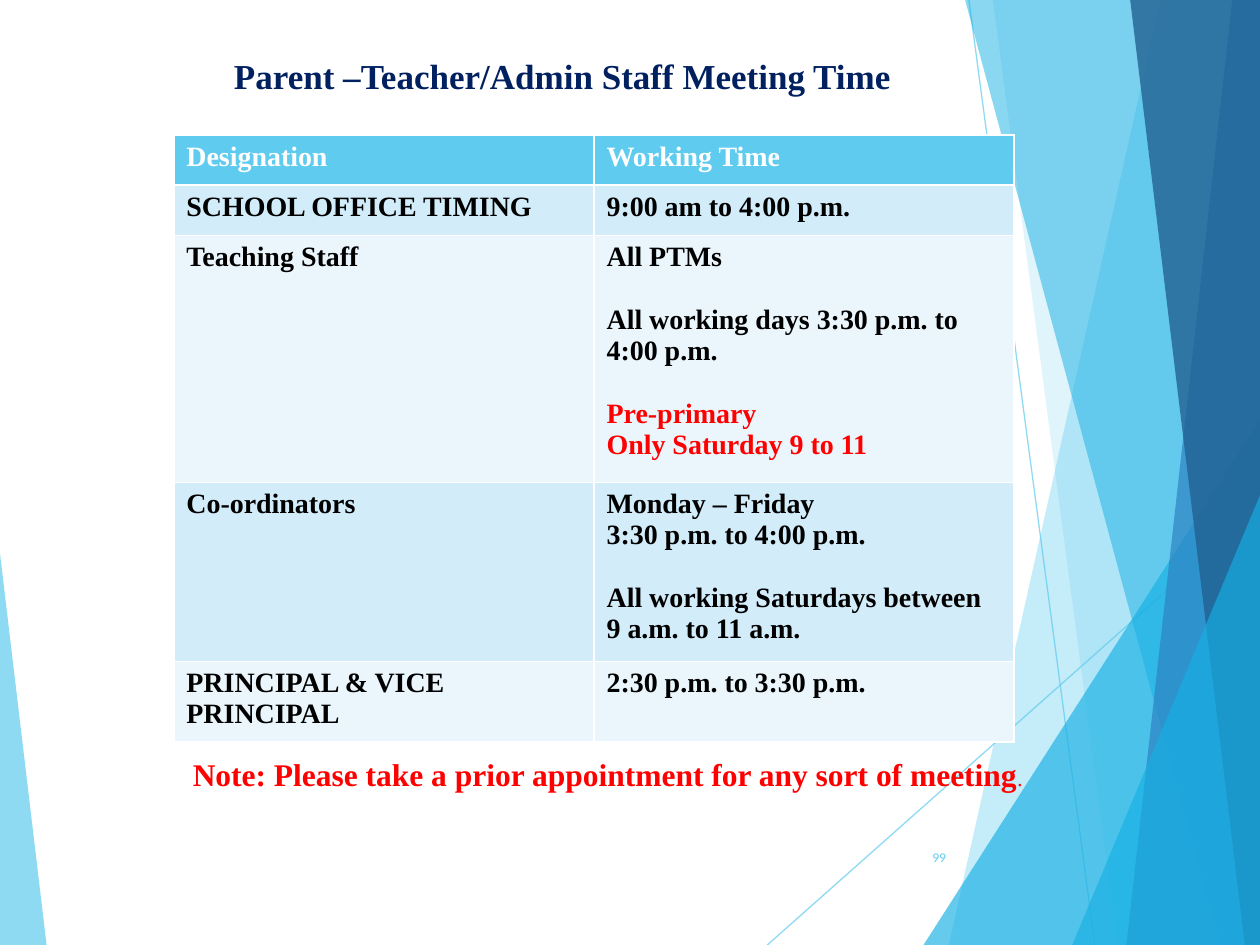
from lxml import etree
from pptx import Presentation
from pptx.dml.color import RGBColor
from pptx.enum import shapes, text
from pptx.oxml import ns
from pptx.util import Inches, Pt

SKY, CYAN, BLUE, NAVY = "5FCBEF", "17B0E4", "2E83C3", "226292"
RED, BLACK, WHITE = "FF0000", "000000", "FFFFFF"
SERIF = "Times New Roman"

RAYS = [((7.69, 0), (8.69, 7.5)), ((10, 4.03), (6.09, 7.5))]
BANDS = [
    (9.21, 7.53, SKY, 36),
    (7.88, 8.87, SKY, 20),
    (7.66, 9.68, CYAN, 50),
    (9.78, 8.94, BLUE, 70),
    (8.97, 9.88, NAVY, 80),
]
TRIANGLES = [
    (7.33, 3.33, 2.67, 1, CYAN, 66),
    (8.51, 3.93, 1.49, 1, CYAN, 66),
    (0, 4.39, 0.37, 0, SKY, 70),
]
HEADINGS = ["Designation", "Working Time"]
TIMINGS = [
    ("SCHOOL OFFICE TIMING", ["9:00 am to 4:00 p.m."]),
    ("Teaching Staff", [
        "All PTMs",
        "All working days 3:30 p.m. to 4:00 p.m.",
        "Pre-primary\nOnly Saturday 9 to 11",
    ]),
    ("Co-ordinators", [
        "Monday – Friday\n3:30 p.m. to 4:00 p.m.",
        "All working Saturdays between 9 a.m. to 11 a.m.",
    ]),
    ("PRINCIPAL & VICE PRINCIPAL", ["2:30 p.m. to 3:30 p.m."]),
]
ROW_HEIGHTS = [0.4, 0.4, 1.96, 1.42, 0.64]


def rgb(color):
    return RGBColor.from_string(color)


def style(run, size, color, font=SERIF, bold=True):
    run.font.size = Pt(size)
    run.font.name = font
    run.font.bold = bold
    run.font.color.rgb = rgb(color)


def place(shape, left, top, width, height):
    shape.left, shape.top = Inches(left), Inches(top)
    shape.width, shape.height = Inches(width), Inches(height)


def set_opacity(shape, percent):
    for color in shape._element.spPr.iter(ns.qn("a:srgbClr")):
        etree.SubElement(color, ns.qn("a:alpha"), val=str(percent * 1000))


def paint(shape, color, percent):
    shape.shadow.inherit = False
    shape.fill.solid()
    shape.fill.fore_color.rgb = rgb(color)
    shape.line.fill.background()
    set_opacity(shape, percent)


def add_ray(slide, start, end):
    ray = slide.shapes.add_connector(
        shapes.MSO_CONNECTOR.STRAIGHT, *map(Inches, start + end))
    ray.line.width = Pt(0.75)
    ray.line.color.rgb = rgb(SKY)
    set_opacity(ray, 70)
    etree.SubElement(ray._element.spPr, ns.qn("a:effectLst"))


def add_band(slide, top_x, bottom_x, color, percent):
    outline = slide.shapes.build_freeform(Inches(top_x), 0)
    corners = [(10, 0), (10, 7.5), (bottom_x, 7.5)]
    outline.add_line_segments([(Inches(x), Inches(y)) for x, y in corners])
    paint(outline.convert_to_shape(), color, percent)


def add_triangle(slide, left, top, width, apex, color, percent):
    triangle = slide.shapes.add_shape(
        shapes.MSO_SHAPE.ISOSCELES_TRIANGLE,
        Inches(left), Inches(top), Inches(width), Inches(7.5 - top))
    triangle.adjustments[0] = apex
    paint(triangle, color, percent)


def add_backdrop(slide):
    for ray in RAYS:
        add_ray(slide, *ray)
    for band in BANDS[:2]:
        add_band(slide, *band)
    add_triangle(slide, *TRIANGLES[0])
    for band in BANDS[2:]:
        add_band(slide, *band)
    for triangle in TRIANGLES[1:]:
        add_triangle(slide, *triangle)


def fill_note(note):
    place(note, 1.46, 4.53, 7.65, 2.02)
    frame = note.text_frame
    frame.auto_size = text.MSO_AUTO_SIZE.NONE
    frame.vertical_anchor = text.MSO_ANCHOR.BOTTOM
    frame.margin_left = frame.margin_right = Inches(0.07)
    frame.margin_bottom = Inches(0.26)
    paragraph = frame.paragraphs[0]
    paragraph.text = "Note: Please take a prior appointment for any sort of meeting"
    style(paragraph.runs[0], 18, RED)
    stop = paragraph.add_run()
    stop.text = "."
    style(stop, 12, RED, bold=False)
    properties = paragraph._p.get_or_add_pPr()
    properties.set("marL", "0")
    properties.set("indent", "0")
    etree.SubElement(properties, ns.qn("a:buNone"))


def fill_title(title):
    place(title, 0.81, 0.38, 7.31, 0.44)
    title.text_frame.text = "Parent –Teacher/Admin Staff Meeting Time"
    style(title.text_frame.paragraphs[0].runs[0], 20, "002060")


def fill_cell(cell, blocks, fill, color):
    cell.fill.solid()
    cell.fill.fore_color.rgb = rgb(fill)
    cell.text_frame.text = "\n".join(blocks)
    paragraphs = iter(cell.text_frame.paragraphs)
    for number, block in enumerate(blocks):
        ink = RED if block.startswith("Pre-primary") else color
        for line in range(len(block.split("\n"))):
            paragraph = next(paragraphs)
            style(paragraph.runs[0], 16, ink)
            if number and line == 0:
                paragraph.space_before = Pt(18)


def add_timetable(slide):
    timetable = slide.shapes.add_table(
        len(ROW_HEIGHTS), 2, Inches(1.38), Inches(1.07),
        Inches(6.67), Inches(sum(ROW_HEIGHTS))).table
    for row, height in zip(timetable.rows, ROW_HEIGHTS):
        row.height = Inches(height)
    for column, heading in enumerate(HEADINGS):
        fill_cell(timetable.cell(0, column), [heading], SKY, WHITE)
    for row, (designation, times) in enumerate(TIMINGS, 1):
        fill = "D2ECF9" if row % 2 else "EAF6FC"
        fill_cell(timetable.cell(row, 0), [designation], fill, BLACK)
        fill_cell(timetable.cell(row, 1), times, fill, BLACK)


def add_page_number(slide):
    number = slide.shapes.add_textbox(
        Inches(7.05), Inches(6.61), Inches(0.56), Inches(0.4))
    frame = number.text_frame
    frame.word_wrap = True
    frame.vertical_anchor = text.MSO_ANCHOR.MIDDLE
    frame.text = "99"
    frame.paragraphs[0].alignment = text.PP_ALIGN.RIGHT
    style(frame.paragraphs[0].runs[0], 6.8, SKY, "Lato", False)


def main():
    deck = Presentation()
    deck.slide_width, deck.slide_height = Inches(10), Inches(7.5)
    slide = deck.slides.add_slide(deck.slide_layouts[1])
    title, note = slide.placeholders
    add_backdrop(slide)
    fill_note(note)
    fill_title(title)
    for placeholder in (note, title):
        slide.shapes._spTree.append(placeholder._element)
    add_timetable(slide)
    add_page_number(slide)
    deck.save("out.pptx")


if __name__ == "__main__":
    main()
